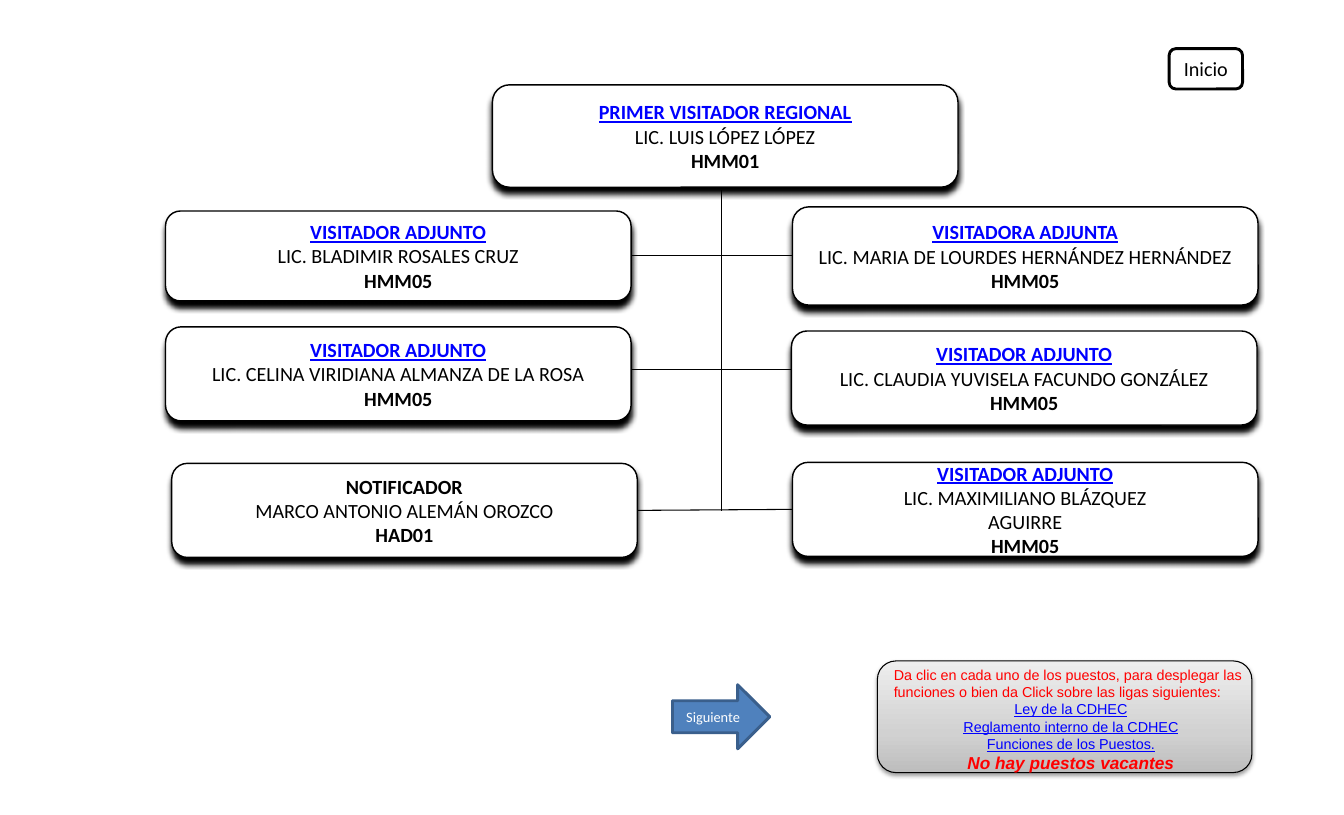
from lxml import etree
from pptx import Presentation
from pptx import util as u
from pptx.dml.color import RGBColor
from pptx.enum import shapes, text
from pptx.oxml.ns import qn

BLACK = RGBColor(0x00, 0x00, 0x00)
WHITE = RGBColor(0xFF, 0xFF, 0xFF)
LINK = RGBColor(0x00, 0x00, 0xFF)
RED = RGBColor(0xFF, 0x00, 0x00)
ARROW = RGBColor(0x4F, 0x81, 0xBD)
ARROW_EDGE = RGBColor(0x3A, 0x5F, 0x8C)
PANEL_STOPS = [(0, RGBColor(0xBD, 0xBD, 0xBD)),
               (35, RGBColor(0xD1, 0xD1, 0xD1)),
               (100, RGBColor(0xEE, 0xEE, 0xEE))]

CELL = 0.1                # side of one grid cell, inches
COLS, ROWS = 129.9, 78.8  # slide size in cells
NODE_W = 45
SHAPE = shapes.MSO_SHAPE
CENTER = text.PP_ALIGN.CENTER


def cells(n):
    return u.Inches(n * CELL)


class Chart:
    """Style and current slide of the organisation chart."""

    def __init__(self, prs):
        self.s = prs.slides.add_slide(prs.slide_layouts[6])

    def style(self, p, size, color, font="Calibri", bold=False,
              italic=False, underline=False, align=CENTER):
        p.alignment = align
        for r in p.runs:
            f = r.font
            f.name, f.size, f.color.rgb = font, u.Pt(size), color
            f.bold, f.italic, f.underline = bold, italic, underline

    def shadow(self, sp, alpha, blur, dist):
        effects = sp._element.spPr.find(qn("a:effectLst"))
        shade = etree.SubElement(effects, qn("a:outerShdw"), blurRad=str(u.Pt(blur)),
                                 dist=str(u.Pt(dist)), dir="5400000", rotWithShape="0")
        clr = etree.SubElement(shade, qn("a:srgbClr"), val=str(BLACK))
        etree.SubElement(clr, qn("a:alpha"), val=str(alpha * 1000))

    def shape(self, kind, at, fill=WHITE, edge=BLACK, weight=1):
        sp = self.s.shapes.add_shape(kind, *map(cells, at))
        sp.shadow.inherit = False
        sp.fill.solid()
        sp.fill.fore_color.rgb = fill
        sp.line.color.rgb = edge
        sp.line.width = u.Pt(weight)
        return sp

    def button(self, kind, at, label, size, color, **look):
        sp = self.shape(kind, at, **look)
        tf = sp.text_frame
        tf.text = label
        tf.vertical_anchor = text.MSO_ANCHOR.MIDDLE
        self.style(tf.paragraphs[0], size, color)

    def node(self, col, row, height, lines, linked=True):
        sp = self.shape(SHAPE.ROUNDED_RECTANGLE, (col, row, NODE_W, height))
        self.shadow(sp, 100, 4, 4)
        tf = sp.text_frame
        tf.word_wrap = False
        tf.vertical_anchor = text.MSO_ANCHOR.MIDDLE
        tf.margin_left = tf.margin_right = u.Inches(0.17)
        tf.margin_top = tf.margin_bottom = u.Inches(0.09)
        tf.text = "\n".join(lines)
        head, *names, code = tf.paragraphs
        self.style(head, 14, LINK if linked else BLACK, bold=True, underline=linked)
        for p in names:
            self.style(p, 14, BLACK)
        self.style(code, 14, BLACK, bold=True)
        return sp

    def line(self, x1, y1, x2, y2):
        cx = self.s.shapes.add_connector(shapes.MSO_CONNECTOR.STRAIGHT,
                                         *map(cells, (x1, y1, x2, y2)))
        cx.line.color.rgb = BLACK
        cx.line.width = u.Pt(0.75)
        etree.SubElement(cx._element.spPr, qn("a:effectLst"))
        return cx

    def join(self, left, right):
        cx = self.line(0, 0, 1, 1)
        cx.begin_connect(left, 3)
        cx.end_connect(right, 1)

    def panel(self, at):
        sp = self.shape(SHAPE.ROUNDED_RECTANGLE, at, weight=0.75)
        self.shadow(sp, 38, 3.1, 1.6)
        sp.fill.gradient()
        sp.fill.gradient_angle = 90
        stops = sp._element.spPr.find(".//" + qn("a:gsLst"))
        for old in list(stops):
            stops.remove(old)
        for pos, color in PANEL_STOPS:
            gs = etree.SubElement(stops, qn("a:gs"), pos=str(pos * 1000))
            etree.SubElement(gs, qn("a:srgbClr"), val=str(color))

    def help_text(self, at, intro, links, note):
        tf = self.s.shapes.add_textbox(*map(cells, at)).text_frame
        tf.word_wrap = True
        tf.auto_size = text.MSO_AUTO_SIZE.SHAPE_TO_FIT_TEXT
        tf.text = "\n".join([intro, *links, note])
        first, *middle, last = tf.paragraphs
        self.style(first, 10, RED, "Arial", align=text.PP_ALIGN.LEFT)
        for p in middle:
            self.style(p, 10, LINK, "Arial", underline=True)
        self.style(last, 12, RED, "Arial", bold=True, italic=True)


def main():
    prs = Presentation()
    prs.slide_width, prs.slide_height = cells(COLS), cells(ROWS)
    c = Chart(prs)

    # Lines that run behind the boxes
    c.line(58.7, 35.7, 81.6, 35.7)
    c.line(69.7, 18.4, 69.7, 49.4)

    # Head of the office
    c.node(47.6, 8.2, 9.9, ["PRIMER VISITADOR REGIONAL", "LIC. LUIS LÓPEZ LÓPEZ", "HMM01"])

    # Left column
    bladimir = c.node(16, 20.4, 8.7, [
        "VISITADOR ADJUNTO", "LIC. BLADIMIR ROSALES CRUZ", "HMM05"])
    c.node(16, 31.6, 9.1, [
        "VISITADOR ADJUNTO", "LIC. CELINA VIRIDIANA ALMANZA DE LA ROSA", "HMM05"])
    marco = c.node(16.6, 44.8, 9.1, [
        "NOTIFICADOR", "MARCO ANTONIO ALEMÁN OROZCO", "HAD01"], linked=False)

    # Right column
    lourdes = c.node(76.6, 20, 9.5, [
        "VISITADORA ADJUNTA", "LIC. MARIA DE LOURDES HERNÁNDEZ HERNÁNDEZ", "HMM05"])
    c.node(76.5, 32, 9.1, [
        "VISITADOR ADJUNTO", "LIC. CLAUDIA YUVISELA FACUNDO GONZÁLEZ", "HMM05"])
    maximiliano = c.node(76.6, 44.7, 9.1, [
        "VISITADOR ADJUNTO", "LIC. MAXIMILIANO BLÁZQUEZ", "AGUIRRE", "HMM05"])

    # Links between facing boxes
    c.join(bladimir, lourdes)
    c.join(marco, maximiliano)

    # Navigation
    c.button(SHAPE.ROUNDED_RECTANGLE, (113, 4.7, 7.1, 3.9), "Inicio", 14, BLACK, weight=2)
    c.button(SHAPE.RIGHT_ARROW, (65, 66.2, 9.4, 6.2), "Siguiente", 10, WHITE,
             fill=ARROW, edge=ARROW_EDGE, weight=2)

    # Help panel
    c.panel((84.8, 63.9, 36.2, 10.8))
    c.help_text((85.4, 63.9, 36.2, 11.4),
                "Da clic en cada uno de los puestos, para desplegar las funciones "
                "o bien da Click sobre las ligas siguientes:",
                ["Ley de la CDHEC", "Reglamento interno de la CDHEC",
                 "Funciones de los Puestos."],
                "No hay puestos vacantes")

    prs.save("out.pptx")


if __name__ == "__main__":
    main()
